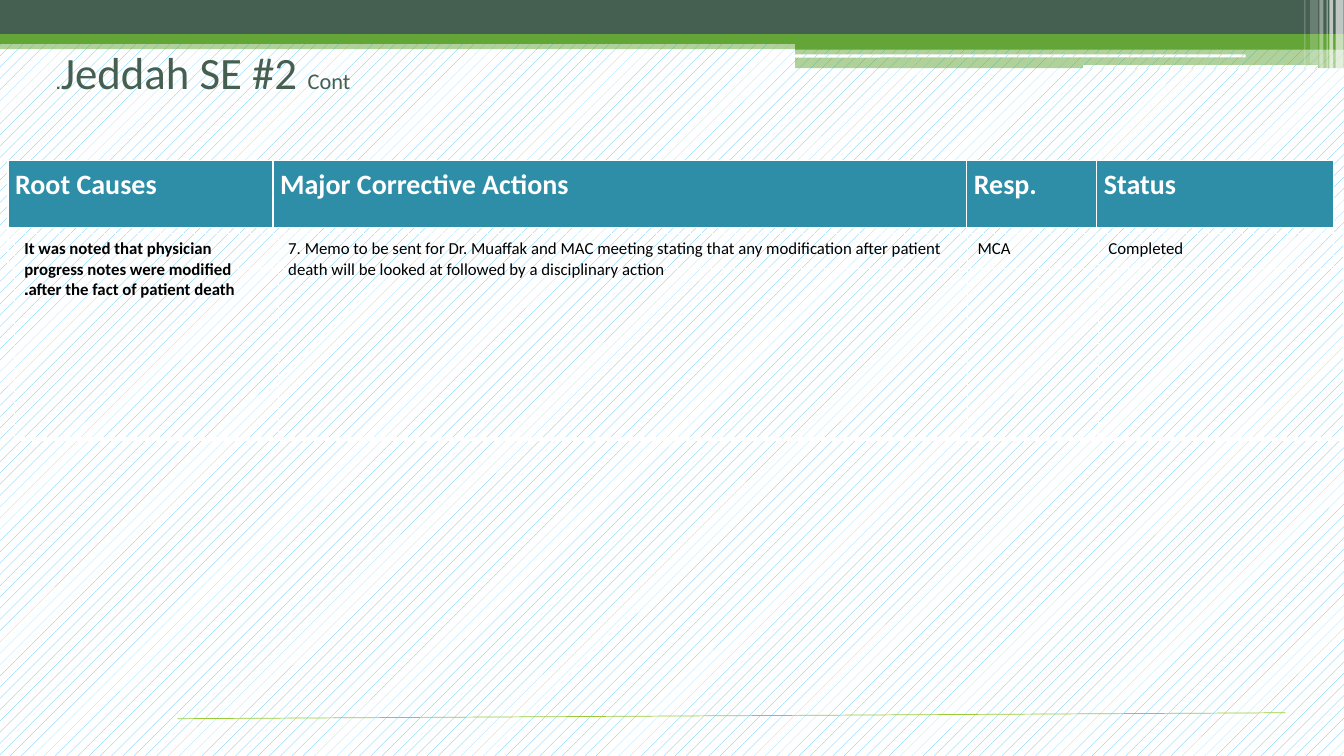
from lxml import etree
from pptx import Presentation
from pptx.dml.color import RGBColor
from pptx.enum.dml import MSO_PATTERN
from pptx.enum.shapes import MSO_CONNECTOR, MSO_SHAPE
from pptx.enum.text import MSO_ANCHOR, MSO_AUTO_SIZE, PP_ALIGN
from pptx.oxml.ns import qn
from pptx.util import Cm, Pt

RECT, ROUND = MSO_SHAPE.RECTANGLE, MSO_SHAPE.ROUNDED_RECTANGLE
DOTS = MSO_PATTERN.PERCENT_10
LEFT, TOP = PP_ALIGN.LEFT, MSO_ANCHOR.TOP
STRAIGHT = MSO_CONNECTOR.STRAIGHT

DARK = RGBColor(0x45, 0x5F, 0x51)
GREEN = RGBColor(0x63, 0xA5, 0x37)
LIME = RGBColor(0x99, 0xCB, 0x38)
SKY = RGBColor(0x51, 0xC3, 0xF9)
TEAL = RGBColor(0x2E, 0x8E, 0xA8)
WHITE = RGBColor(0xFF, 0xFF, 0xFF)
BLACK = RGBColor(0, 0, 0)
FONT = "Calibri"
WIDTH, HEIGHT = 33.87, 19.05

TITLE = [("Jeddah SE #2 ", 32), ("Cont.", 16)]
HEADERS = ["Root Causes", "Major Corrective Actions", "Resp.", "Status"]
ACTIONS = [
    "It was noted that physician progress notes were modified after "
    "the fact of patient death.",
    "7. Memo to be sent for Dr. Muaffak and MAC meeting stating that any "
    "modification after patient death will be looked at followed by a "
    "disciplinary action",
    "MCA",
    "Completed",
]
HEADER_COLS = [6.68, 17.48, 3.28, 5.97]
ACTION_COLS = [6.65, 17.37, 3.3, 6.17]

BANDS = [
    (0, 1.02, WIDTH, 0.22, GREEN, 50),
    (0, 0, WIDTH, 0.86, DARK, 100),
    (0, 0.86, WIDTH, 0.25, GREEN, 100),
    (20.04, 1, 13.83, 0.25, GREEN, 100),
    (20.04, 1.22, 13.83, 0.5, GREEN, 50),
]
SLOTS = [(20.04, 1.37, 11.35, 0.08), (27.3, 1.63, 5.92, 0.1)]
STRIPES = [
    (33.66, 0.2, 1.73, 65),
    (33.5, 0.1, 1.73, 65),
    (33.43, 0.03, 1.73, 60),
    (33.25, 0.1, 1.73, 40),
    (33.02, 0.2, 1.63, 20),
    (32.87, 0.03, 1.63, 30),
]


def set_dots(fill):
    fill.patterned()
    fill.pattern = DOTS
    fill.fore_color.rgb = SKY
    fill.back_color.rgb = WHITE


def add_bar(s, kind, x, y, w, h):
    sp = s.shapes.add_shape(kind, Cm(x), Cm(y), Cm(w), Cm(h))
    sp.shadow.inherit = False
    sp.line.fill.background()
    return sp


def add_band(s, x, y, w, h, color, opacity):
    sp = add_bar(s, RECT, x, y, w, h)
    sp.fill.solid()
    sp.fill.fore_color.rgb = color
    if opacity < 100:
        clr = sp._element.spPr.find(qn("a:solidFill"))[0]
        etree.SubElement(clr, qn("a:alpha"), val=str(opacity * 1000))


def style_run(r, size, color, bold=False):
    r.font.name = FONT
    r.font.size = Pt(size)
    r.font.bold = bold
    r.font.color.rgb = color


def set_rtl(p):
    p.alignment = LEFT
    p._p.get_or_add_pPr().set("rtl", "1")


def set_borders(cell, widths):
    tcPr = cell._tc.get_or_add_tcPr()
    for i, (side, width) in enumerate(widths.items()):
        ln = etree.Element(qn("a:ln" + side), w=str(Pt(width)))
        fill = etree.SubElement(ln, qn("a:solidFill"))
        etree.SubElement(fill, qn("a:srgbClr"), val=str(WHITE))
        tcPr.insert(i, ln)


def add_grid(s, x, y, cols, rows):
    frame = s.shapes.add_table(len(rows), len(cols), Cm(x), Cm(y),
                               Cm(sum(cols)), Cm(sum(rows)))
    table = frame.table
    table.first_row = table.horz_banding = False
    for col, width in zip(table.columns, cols):
        col.width = Cm(width)
    for row, height in zip(table.rows, rows):
        row.height = Cm(height)
    for cell in table.iter_cells():
        cell.fill.background()
    return table


def fill_cell(cell, text, size, color, bold):
    cell.text_frame.text = text
    style_run(cell.text_frame.paragraphs[0].runs[0], size, color, bold)


def main():
    prs = Presentation()
    prs.slide_width, prs.slide_height = Cm(WIDTH), Cm(HEIGHT)
    s = prs.slides.add_slide(prs.slide_layouts[5])
    set_dots(s.background.fill)

    for band in BANDS:
        add_band(s, *band)
    for slot in SLOTS:
        set_dots(add_bar(s, ROUND, *slot).fill)
    for x, w, h, opacity in STRIPES:
        add_band(s, x, 0, w, h, WHITE, opacity)

    rule = s.shapes.add_connector(STRAIGHT, Cm(4.47), Cm(18.11), Cm(32.39), Cm(17.96))
    rule.line.color.rgb = LIME
    rule.line.width = Pt(0.5)
    etree.SubElement(rule._element.spPr, qn("a:effectLst"))

    title = s.shapes.title
    s.shapes._spTree.append(title._element)
    title.left, title.top, title.width, title.height = Cm(1.14), Cm(0.99), Cm(28.88), Cm(3.2)
    tf = title.text_frame
    tf.vertical_anchor = TOP
    tf.auto_size = MSO_AUTO_SIZE.NONE
    tf.word_wrap = True
    p = tf.paragraphs[0]
    set_rtl(p)
    for text, size in TITLE:
        r = p.add_run()
        r.text = text
        style_run(r, size, DARK)

    header = add_grid(s, 0.2, 4.04, HEADER_COLS, [1.7, 0.41])
    for i, text in enumerate(HEADERS):
        cell = header.cell(0, i)
        cell.margin_left = cell.margin_right = Cm(0.18)
        cell.margin_top, cell.margin_bottom = Cm(0.2), 0
        cell.fill.solid()
        cell.fill.fore_color.rgb = TEAL
        fill_cell(cell, text, 20, WHITE, True)
        set_borders(cell, {"L": 1, "R": 1, "T": 1})
    header.cell(1, 0).merge(header.cell(1, len(HEADERS) - 1))

    actions = add_grid(s, 0.36, 5.89, ACTION_COLS, [5.18])
    for i, text in enumerate(ACTIONS):
        cell = actions.cell(0, i)
        fill_cell(cell, text, 12, BLACK, i == 0)
        set_borders(cell, {"L": 1, "R": 1, "T": 1, "B": 3})
    set_rtl(actions.cell(0, 0).text_frame.paragraphs[0])

    prs.save("out.pptx")


if __name__ == "__main__":
    main()
